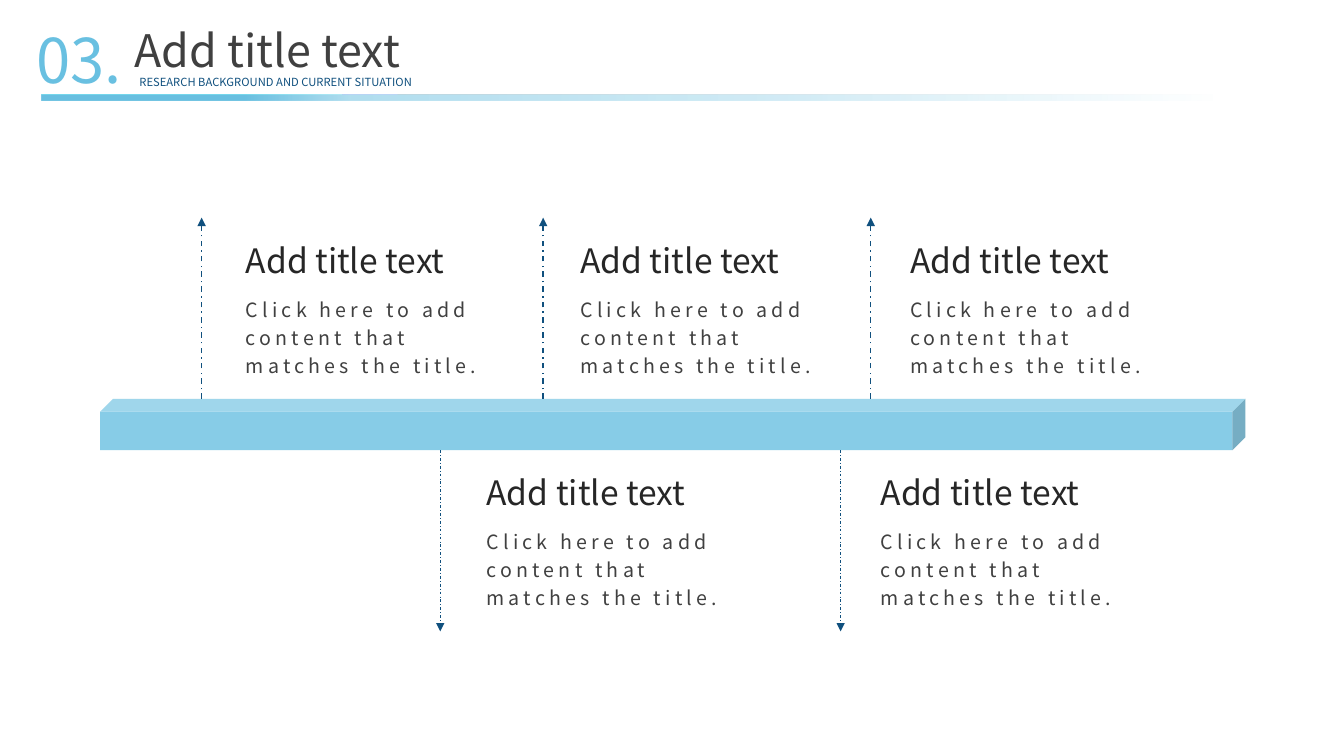
from lxml import etree
from pptx import Presentation
from pptx.dml.color import RGBColor
from pptx.enum.dml import MSO_LINE
from pptx.enum.shapes import MSO_CONNECTOR, MSO_SHAPE
from pptx.enum.text import MSO_ANCHOR, MSO_AUTO_SIZE, PP_ALIGN
from pptx.oxml import parse_xml
from pptx.oxml.ns import nsdecls, qn
from pptx.util import Pt

CUBE, RECTANGLE = MSO_SHAPE.CUBE, MSO_SHAPE.RECTANGLE
STRAIGHT = MSO_CONNECTOR.STRAIGHT
DASH_DOT = MSO_LINE.DASH_DOT
MIDDLE, TOP = MSO_ANCHOR.MIDDLE, MSO_ANCHOR.TOP
LEFT, JUSTIFY = PP_ALIGN.LEFT, PP_ALIGN.JUSTIFY
NO_AUTOFIT = MSO_AUTO_SIZE.NONE

SKY = RGBColor(0x69, 0xC0, 0xE1)
NAVY = RGBColor(0x10, 0x50, 0x7E)
DARK = RGBColor(0x26, 0x26, 0x26)
GREY = RGBColor(0x40, 0x40, 0x40)
FONT = "Noto Sans CJK SC"

ITEM_TITLE = "Add title text"
ITEM_BODY = "Click here to add content that matches the title."
FADE_STOPS = [(1, 0), (37, 30), (74, 52), (83, 100), (100, 100)]
BAR_BOX = (71.5, 285, 818, 36.5)
ARROW_LENGTH = 129.5
UPPER_ITEMS = [(144, 168.5), (388, 407.5), (622, 643)]
LOWER_ITEMS = [(314.5, 340.5), (600.5, 622)]


def write_text(shape, text, size, color, align=LEFT, anchor=MIDDLE):
    """Fill a text shape with one formatted paragraph and return it."""
    frame = shape.text_frame
    frame.text = text
    frame.word_wrap = True
    frame.auto_size = NO_AUTOFIT
    frame.vertical_anchor = anchor
    frame.margin_left = frame.margin_right = Pt(7.2)
    frame.margin_top = frame.margin_bottom = 0
    para = frame.paragraphs[0]
    para.alignment = align
    font = para.runs[0].font
    font.name, font.size, font.color.rgb = FONT, Pt(size), color
    return para


def add_text(slide, box, text, size, color, align=LEFT, anchor=MIDDLE):
    """Add a text box and return its paragraph."""
    shape = slide.shapes.add_textbox(*map(Pt, box))
    return write_text(shape, text, size, color, align, anchor)


def add_flat_shape(slide, kind, box):
    """Add a sky-coloured preset shape without outline or shadow."""
    shape = slide.shapes.add_shape(kind, *map(Pt, box))
    shape.shadow.inherit = False
    shape.fill.solid()
    shape.fill.fore_color.rgb = SKY
    shape.line.fill.background()
    return shape


def add_header(slide, box):
    """Place the number, title, subtitle and fading rule inside the box."""
    left, top, width, height = box
    title = slide.shapes.title
    title.left, title.top = Pt(left + 59), Pt(top - 1)
    title.width, title.height = Pt(286), Pt(46.5)
    write_text(title, "Add title text", 32, GREY, JUSTIFY)
    add_text(slide, (left - 11, top - 1, 79, 60.5), "03.", 44, SKY)
    add_text(slide, (left + 62.5, top + 36.5, 310, 17.5),
             "RESEARCH BACKGROUND AND CURRENT SITUATION", 8, NAVY, JUSTIFY)
    rule = add_flat_shape(slide, RECTANGLE, (left, top + height - 4, width, 4))
    stops = "".join(
        f'<a:gs pos="{position * 1000}"><a:srgbClr val="{SKY}">'
        f'<a:alpha val="{alpha * 1000}"/></a:srgbClr></a:gs>'
        for position, alpha in FADE_STOPS)
    gradient = parse_xml(
        f'<a:gradFill {nsdecls("a")} rotWithShape="1"><a:gsLst>{stops}</a:gsLst>'
        '<a:lin ang="10800000" scaled="0"/></a:gradFill>')
    properties = rule.fill._xPr
    properties.replace(properties.find(qn("a:solidFill")), gradient)


def add_bar(slide, box):
    """Draw the translucent timeline bar."""
    bar = add_flat_shape(slide, CUBE, box)
    color = bar.fill._xPr.find(qn("a:solidFill"))[0]
    etree.SubElement(color, qn("a:alpha"), val="80000")


def add_arrow(slide, x, start, end, weight):
    """Draw a vertical dashed arrow from start to end."""
    arrow = slide.shapes.add_connector(STRAIGHT, Pt(x), Pt(start), Pt(x), Pt(end))
    arrow.line.color.rgb = NAVY
    arrow.line.width = Pt(weight)
    arrow.line.dash_style = DASH_DOT
    etree.SubElement(arrow.line._get_or_add_ln(), qn("a:tailEnd"), type="triangle")
    etree.SubElement(arrow._element.spPr, qn("a:effectLst"))


def add_item(slide, left, top):
    """Place an item's title and body below the given corner."""
    add_text(slide, (left, top + 12, 194, 36), ITEM_TITLE, 24, DARK)
    body = add_text(slide, (left, top + 54, 194.5, 64), ITEM_BODY, 14, GREY, anchor=TOP)
    body.line_spacing = Pt(20)
    body.runs[0].font._element.set("spc", "300")


def add_timeline(slide, box):
    """Draw the bar with items rising above and hanging below it."""
    upper_edge = box[1]
    lower_edge = box[1] + box[3]
    add_bar(slide, box)
    for arrow_x, text_left in UPPER_ITEMS:
        add_arrow(slide, arrow_x, upper_edge, upper_edge - ARROW_LENGTH, 1)
        add_item(slide, text_left, upper_edge - ARROW_LENGTH)
    for arrow_x, text_left in LOWER_ITEMS:
        add_arrow(slide, arrow_x, lower_edge, lower_edge + ARROW_LENGTH, 0.5)
        add_item(slide, text_left, lower_edge)


def main():
    """Build and save the deck."""
    deck = Presentation()
    deck.slide_width, deck.slide_height = Pt(960), Pt(540)
    page = deck.slides.add_slide(deck.slide_layouts[5])
    add_header(page, (30, 13, 847, 58.5))
    add_timeline(page, BAR_BOX)
    deck.save("out.pptx")


if __name__ == "__main__":
    main()
